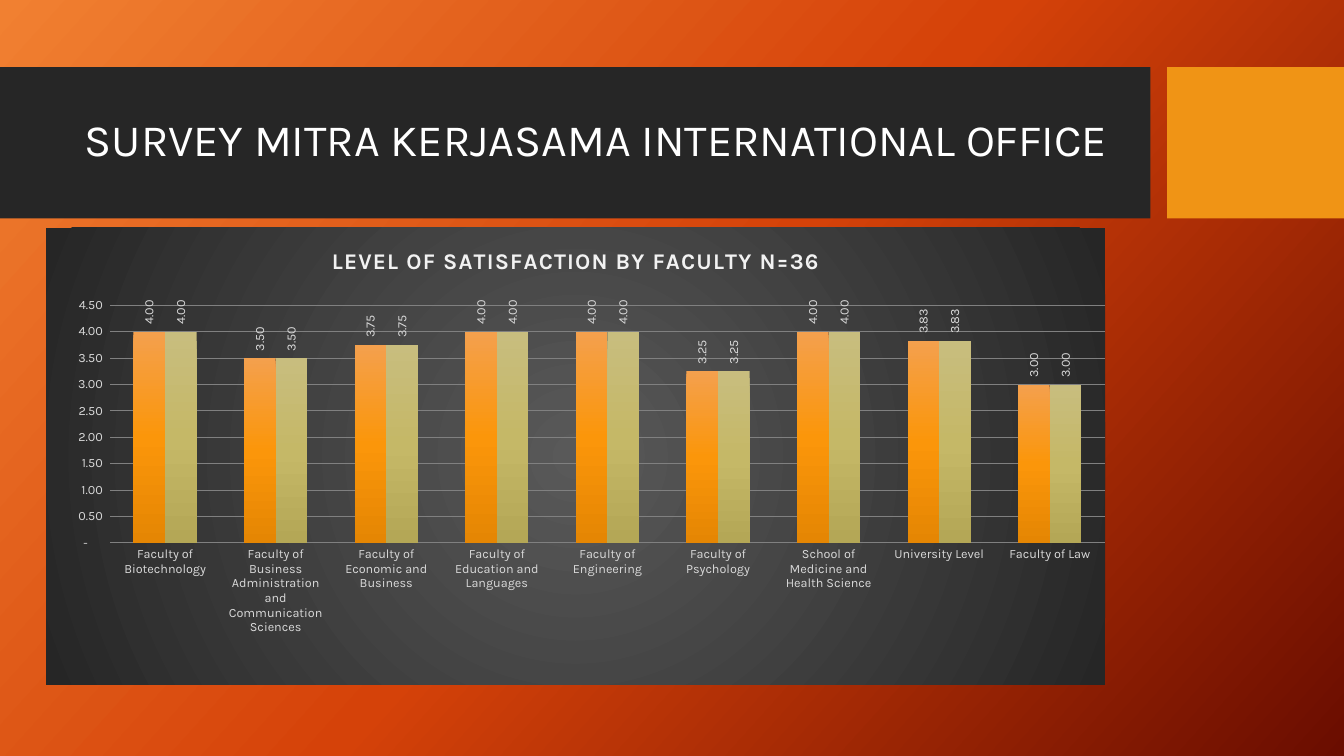
"""Builds the slide on satisfaction with the international office by faculty."""
from lxml.etree import SubElement
from pptx import Presentation
from pptx.chart.data import CategoryChartData
from pptx.dml.color import RGBColor
from pptx.enum.chart import XL_CHART_TYPE, XL_LABEL_POSITION, XL_TICK_MARK
from pptx.enum.shapes import MSO_SHAPE
from pptx.enum.text import MSO_ANCHOR
from pptx.oxml.ns import qn
from pptx.util import Pt

NUMBER_FORMAT = '_(* #,##0.00_);_(* \\(#,##0.00\\);_(* "-"??_);_(@_)'
FACULTIES = {
    "Faculty of Biotechnology": 4,
    "Faculty of Business Administration and Communication Sciences": 3.5,
    "Faculty of Economic and Business": 3.75,
    "Faculty of Education and Languages": 4,
    "Faculty of Engineering": 4,
    "Faculty of Psychology": 3.25,
    "School of Medicine and Health Science": 4,
    "University Level": 3.83,
    "Faculty of Law": 3,
}
SERIES_STOPS = {
    "Series 1": ("F4A04D", "FB960A", "E58603"),
    "Series 2": ("C8BD7E", "C5B867", "B4A756"),
}


def rgb(value):
    return RGBColor.from_string(value)


def apply(obj, values):
    for name, value in values.items():
        setattr(obj, name, value)


class SlideBuilder:
    font = "Karla"
    label_color = "D9D9D9"

    def __init__(self, prs):
        self.s = prs.slides.add_slide(prs.slide_layouts[6])

    def write_font(self, font, size, color, bold=False):
        apply(font, {"name": self.font, "size": Pt(size), "bold": bold})
        font.color.rgb = rgb(color)

    def fill_stops(self, grad, colors, angle=None):
        grad.clear()
        stops = SubElement(grad, qn("a:gsLst"))
        for i, color in enumerate(colors):
            stop = SubElement(stops, qn("a:gs"), pos=str(100000 * i // (len(colors) - 1)))
            SubElement(stop, qn("a:srgbClr"), val=color)
        if angle is None:
            circle = SubElement(grad, qn("a:path"), {"path": "circle"})
            sides = dict.fromkeys("ltrb", "50000")
            SubElement(circle, qn("a:fillToRect"), sides)
        else:
            SubElement(grad, qn("a:lin"), ang=str(angle * 60000), scaled="0")

    def gradient(self, fill, root, colors, angle):
        fill.gradient()
        self.fill_stops(root.find(".//" + qn("a:gradFill")), colors, angle)

    def background(self, colors, angle):
        self.gradient(self.s.background.fill, self.s.element, colors, angle)

    def rect(self, x, y, w, h, color):
        sp = self.s.shapes.add_shape(MSO_SHAPE.RECTANGLE, Pt(x), Pt(y), Pt(w), Pt(h))
        sp.shadow.inherit = False
        sp.fill.solid()
        sp.fill.fore_color.rgb = rgb(color)
        sp.line.fill.background()

    def text(self, x, y, w, h, text, size, color):
        tf = self.s.shapes.add_textbox(Pt(x), Pt(y), Pt(w), Pt(h)).text_frame
        apply(tf, {"word_wrap": True, "vertical_anchor": MSO_ANCHOR.MIDDLE})
        p = tf.paragraphs[0]
        p.line_spacing = 0.9
        r = p.add_run()
        r.text = text
        self.write_font(r.font, size, color)

    def column_chart(self, x, y, w, h, title, values, series_stops, plot_area):
        data = CategoryChartData(number_format=NUMBER_FORMAT)
        data.categories = list(values)
        for name in series_stops:
            data.add_series(name, list(values.values()))
        chart = self.s.shapes.add_chart(
            XL_CHART_TYPE.COLUMN_CLUSTERED, Pt(x), Pt(y), Pt(w), Pt(h), data).chart
        apply(chart, {"has_legend": False, "has_title": True})
        self.write_font(chart.font, 10, "FFFFFF")
        self.chart_title(chart, title)
        self.chart_fill(chart, ("595959", "262626"))
        self.chart_layout(chart, plot_area)
        self.axes(chart)
        plot = chart.plots[0]
        apply(plot, {"gap_width": 150, "overlap": 0, "vary_by_categories": False})
        for series, colors in zip(plot.series, series_stops.values()):
            self.gradient(series.format.fill, series._element, colors, 90)
            self.data_labels(series.data_labels)

    def chart_title(self, chart, title):
        p = chart.chart_title.text_frame.paragraphs[0]
        r = p.add_run()
        r.text = title
        self.write_font(r.font, 16, "F2F2F2", bold=True)
        r.font._element.set("spc", "100")
        chart.chart_title.include_in_layout = False

    def chart_fill(self, chart, colors):
        root = chart.element if hasattr(chart, "element") else chart._chartSpace
        sp_pr = SubElement(root, qn("c:spPr"))
        root.find(qn("c:chart")).addnext(sp_pr)
        self.fill_stops(SubElement(sp_pr, qn("a:gradFill")), colors)
        SubElement(SubElement(sp_pr, qn("a:ln")), qn("a:noFill"))

    def chart_layout(self, chart, plot_area):
        area = chart._chartSpace.find(".//" + qn("c:plotArea"))
        for old in area.findall(qn("c:layout")):
            area.remove(old)
        layout = SubElement(area, qn("c:layout"))
        area.insert(0, layout)
        manual = SubElement(layout, qn("c:manualLayout"))
        settings = {"layoutTarget": "inner", "xMode": "edge", "yMode": "edge"}
        settings.update(zip("xywh", plot_area))
        for name, value in settings.items():
            SubElement(manual, qn("c:" + name), val=str(value))

    def axes(self, chart):
        for axis in (chart.category_axis, chart.value_axis):
            apply(axis, {"major_tick_mark": XL_TICK_MARK.NONE,
                         "minor_tick_mark": XL_TICK_MARK.NONE})
            axis.format.line.fill.background()
            self.write_font(axis.tick_labels.font, 9, self.label_color)
        axis = chart.value_axis
        apply(axis, {"minimum_scale": 0, "maximum_scale": 4.5, "major_unit": 0.5,
                     "has_major_gridlines": True})
        apply(axis.tick_labels, {"number_format": NUMBER_FORMAT,
                                 "number_format_is_linked": False})
        line = axis.major_gridlines.format.line
        line.width = Pt(0.75)
        line.color.rgb = rgb("808080")

    def data_labels(self, labels):
        apply(labels, {"show_value": True, "number_format": NUMBER_FORMAT,
                       "number_format_is_linked": False,
                       "position": XL_LABEL_POSITION.OUTSIDE_END})
        self.write_font(labels.font, 9, self.label_color)
        body = labels._element.find(".//" + qn("a:bodyPr"))
        body.set("rot", "-5400000")
        body.set("vert", "horz")


def main():
    prs = Presentation()
    apply(prs, {"slide_width": Pt(960), "slide_height": Pt(540)})
    slide = SlideBuilder(prs)
    slide.background(("F18031", "D54209", "6A0D00"), 42)
    slide.rect(0, 48, 821.75, 108, "262626")
    slide.rect(833.75, 48, 126.25, 108, "F09415")
    slide.text(53.5, 59, 756.75, 85, "SURVEY MITRA KERJASAMA INTERNATIONAL OFFICE",
               32, "FFFFFF")
    slide.column_chart(33, 162.75, 756.75, 326.25,
                       "LEVEL OF SATISFACTION BY FACULTY N=36",
                       FACULTIES, SERIES_STOPS, (0.06, 0.17, 0.94, 0.52))
    prs.save("out.pptx")


if __name__ == "__main__":
    main()
